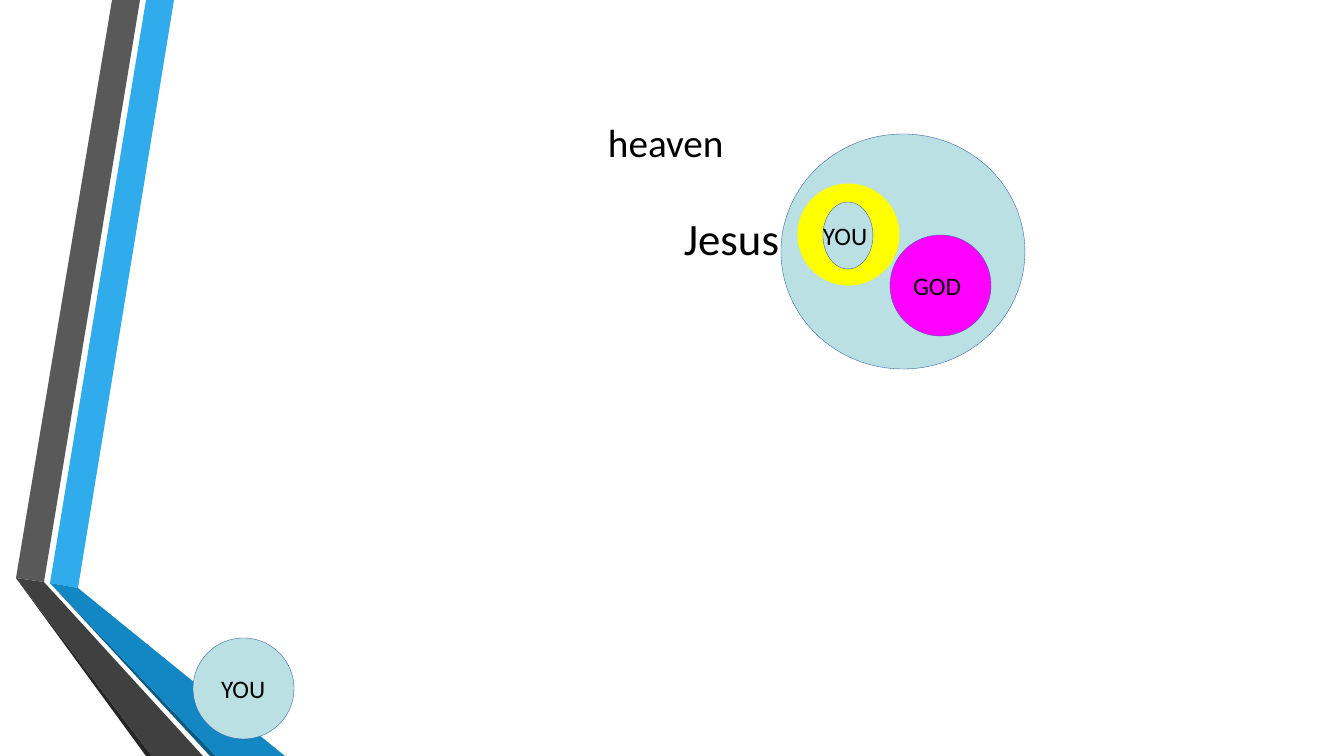
"""Build the heaven slide: two folded ribbons, nested circles and their labels."""
from typing import NamedTuple

from pptx import Presentation
from pptx.dml.color import RGBColor
from pptx.enum.shapes import MSO_SHAPE
from pptx.enum.text import MSO_ANCHOR, PP_ALIGN
from pptx.util import Emu, Pt

SCALE = 914400 / 100.8

BLACK = RGBColor(0x00, 0x00, 0x00)
CHARCOAL = RGBColor(0x26, 0x26, 0x26)
DARK_GREY = RGBColor(0x40, 0x40, 0x40)
GREY = RGBColor(0x59, 0x59, 0x59)
SKY = RGBColor(0x30, 0xAC, 0xEC)
BLUE = RGBColor(0x12, 0x87, 0xC3)
NAVY = RGBColor(0x0C, 0x5A, 0x82)
PALE = RGBColor(0xBB, 0xE0, 0xE3)
MAGENTA = RGBColor(0xFF, 0x00, 0xFF)
YELLOW = RGBColor(0xFF, 0xFF, 0x00)
OUTLINE = RGBColor(0x2F, 0x5F, 0xA8)


class Ribbon(NamedTuple):
    points: list[tuple[int, int]]
    fill: RGBColor


class Circle(NamedTuple):
    left: int
    top: int
    width: int
    height: int
    fill: RGBColor
    line: RGBColor = OUTLINE
    weight: float = 0.25
    text: str = ""
    inset: int = 0


class Label(NamedTuple):
    left: int
    top: int
    width: int
    height: int
    text: str
    size: int


RIBBONS = [
    Ribbon([(50, 583), (78, 588), (174, 0), (146, 0)], SKY),
    Ribbon([(140, 0), (112, 0), (16, 578), (44, 582)], GREY),
    Ribbon([(16, 578), (146, 756), (152, 756)], CHARCOAL),
    Ribbon([(50, 583), (210, 756), (216, 756)], NAVY),
    Ribbon([(50, 583), (216, 756), (285, 756), (78, 588)], BLUE),
    Ribbon([(16, 578), (152, 756), (203, 756), (44, 582)], DARK_GREY),
]
LABELS = [
    Label(608, 118, 140, 48, "heaven", 28),
    Label(684, 210, 110, 55, "Jesus", 32),
]
CIRCLES = [
    Circle(193, 638, 101, 101, PALE, text="YOU", inset=28),
    Circle(781, 134, 244, 235, PALE),
    Circle(890, 235, 101, 101, MAGENTA, text="GOD", inset=23),
    Circle(798, 184, 101, 101, YELLOW, YELLOW, 0.75),
    Circle(823, 202, 50, 67, PALE, text="YOU"),
]


def px(n: int) -> Emu:
    """Turn pixels into EMU."""
    return Emu(round(n * SCALE))


def write(sp, text: str, size: int, inset: int = 0) -> None:
    """Write one left-aligned line, centred vertically."""
    tf = sp.text_frame
    frame = {"margin_left": px(inset), "margin_top": 0, "margin_right": 0,
             "margin_bottom": 0, "word_wrap": False,
             "vertical_anchor": MSO_ANCHOR.MIDDLE}
    for name, value in frame.items():
        setattr(tf, name, value)
    p = tf.paragraphs[0]
    p.alignment = PP_ALIGN.LEFT
    r = p.add_run()
    r.text = text
    for name, value in {"name": "Calibri", "size": Pt(size)}.items():
        setattr(r.font, name, value)
    r.font.color.rgb = BLACK


def paint(sp, fill: RGBColor) -> None:
    """Give a shape a flat fill without shadow."""
    sp.shadow.inherit = False
    sp.fill.solid()
    sp.fill.fore_color.rgb = fill


def draw_ribbon(s, ribbon: Ribbon) -> None:
    """Draw one ribbon face as a polygon."""
    start, *rest = ribbon.points
    builder = s.shapes.build_freeform(*start, scale=SCALE)
    builder.add_line_segments(rest, close=True)
    sp = builder.convert_to_shape()
    paint(sp, ribbon.fill)
    sp.line.fill.background()


def draw_label(s, label: Label) -> None:
    """Draw one free-standing label."""
    sp = s.shapes.add_textbox(*map(px, label[:4]))
    write(sp, label.text, label.size)


def draw_circle(s, circle: Circle) -> None:
    """Draw one circle with its optional text."""
    sp = s.shapes.add_shape(MSO_SHAPE.OVAL, *map(px, circle[:4]))
    paint(sp, circle.fill)
    sp.line.color.rgb = circle.line
    sp.line.width = Pt(circle.weight)
    if circle.text:
        # The oval's text area starts inside its bounding box.
        write_on_circle(s, circle)


def write_on_circle(s, circle: Circle) -> None:
    """Set the circle's text from its left edge."""
    sp = s.shapes.add_textbox(*map(px, circle[:4]))
    write(sp, circle.text, 18, circle.inset)


def main() -> None:
    """Build and save the slide."""
    prs = Presentation()
    prs.slide_width, prs.slide_height = px(1344), px(756)
    s = prs.slides.add_slide(prs.slide_layouts[6])
    for ribbon in RIBBONS:
        draw_ribbon(s, ribbon)
    for label in LABELS:
        draw_label(s, label)
    for circle in CIRCLES:
        draw_circle(s, circle)
    prs.save("out.pptx")


if __name__ == "__main__":
    main()
